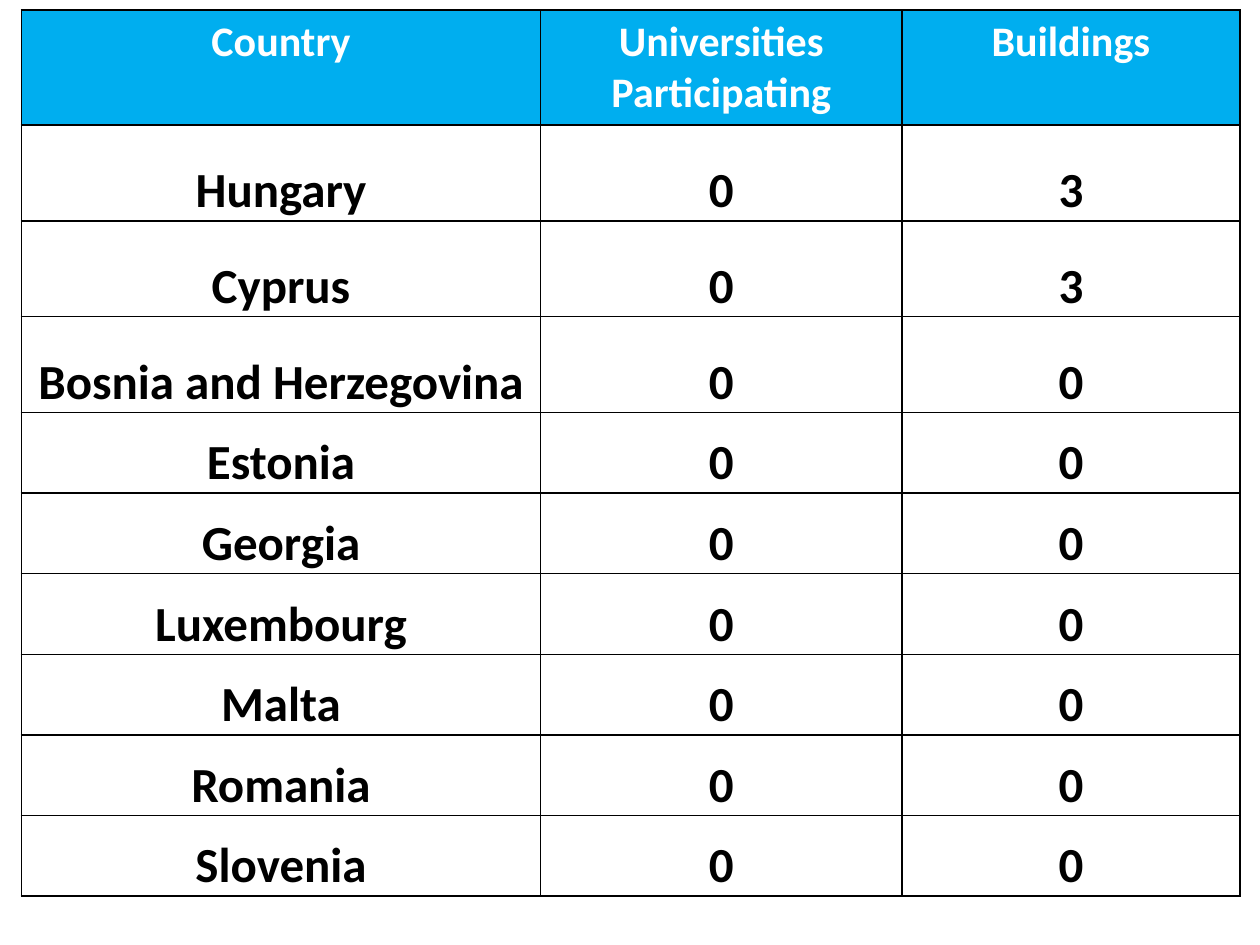
from lxml.etree import SubElement as Sub
from pptx import Presentation
from pptx.dml.color import RGBColor
from pptx.enum.text import MSO_ANCHOR as Anchor, PP_ALIGN as Align
from pptx.oxml.ns import qn
from pptx.util import Inches, Pt

# Table content
HEADS = ["Country", "Universities Participating", "Buildings"]
ROWS = [
    ("Hungary", 0, 3),
    ("Cyprus", 0, 3),
    ("Bosnia and Herzegovina", 0, 0),
    ("Estonia", 0, 0),
    ("Georgia", 0, 0),
    ("Luxembourg", 0, 0),
    ("Malta", 0, 0),
    ("Romania", 0, 0),
    ("Slovenia", 0, 0),
]
WIDTHS = [4.12, 2.87, 2.68]
HEIGHTS = [0.85] + [0.76] * 3 + [0.64] * 6


def color(code):
    return RGBColor.from_string(code)


class Page:
    font = "Calibri"
    blue, white, black = "00AEEF", "FFFFFF", "000000"

    def __init__(self, deck):
        self.slide = deck.slides.add_slide(deck.slide_layouts[6])

    def border(self, cell):
        props = cell._tc.get_or_add_tcPr()
        for side in ("lnL", "lnR", "lnT", "lnB"):
            line = Sub(props, qn(f"a:{side}"), w=str(Pt(1)))
            fill = Sub(line, qn("a:solidFill"))
            Sub(fill, qn("a:srgbClr"), val=self.black)

    def cell(self, cell, text, head):
        self.border(cell)
        if head:
            cell.fill.solid()
            cell.fill.fore_color.rgb = color(self.blue)
        else:
            cell.fill.background()
            cell.vertical_anchor = Anchor.BOTTOM
            cell.margin_left = cell.margin_right = cell.margin_top = Inches(0.01)
            cell.margin_bottom = 0
        cell.text = str(text)
        para = cell.text_frame.paragraphs[0]
        para.alignment = Align.CENTER
        para.font.name = self.font
        para.font.size = Pt(24 if head else 28)
        para.font.bold = True
        para.font.color.rgb = color(self.white if head else self.black)

    def table(self, left, top, widths, heights, rows):
        frame = self.slide.shapes.add_table(
            len(rows), len(widths), Inches(left), Inches(top),
            Inches(sum(widths)), Inches(sum(heights)))
        grid = frame.table
        for col, width in zip(grid.columns, widths):
            col.width = Inches(width)
        for r, (height, row) in enumerate(zip(heights, rows)):
            grid.rows[r].height = Inches(height)
            for c, text in enumerate(row):
                self.cell(grid.cell(r, c), text, head=r == 0)


def main():
    deck = Presentation()
    deck.slide_width, deck.slide_height = Inches(10), Inches(7.5)
    # Countries with their universities and buildings
    page = Page(deck)
    page.table(0.17, 0.08, WIDTHS, HEIGHTS, [HEADS] + ROWS)
    deck.save("out.pptx")


if __name__ == "__main__":
    main()
